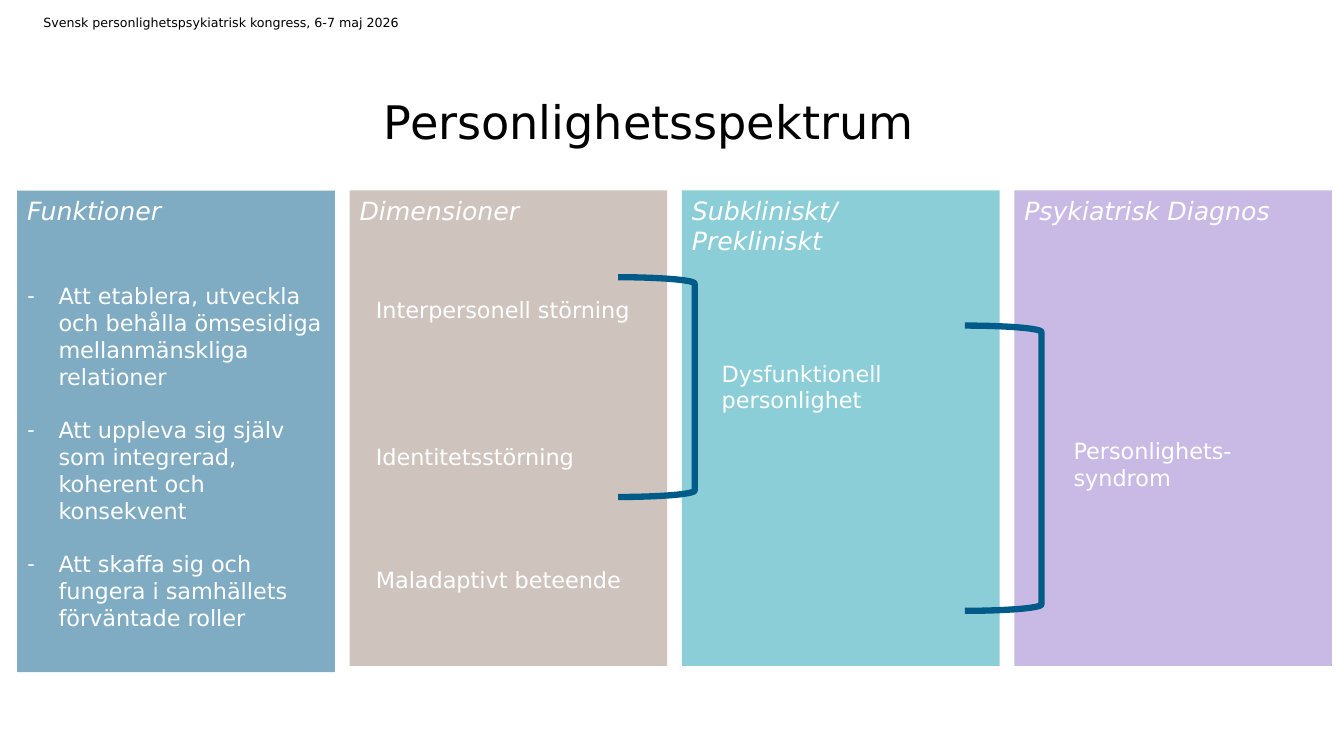
from lxml.etree import SubElement
from pptx import Presentation
from pptx.dml.color import RGBColor
from pptx.enum.shapes import MSO_SHAPE
from pptx.enum.text import MSO_ANCHOR, MSO_AUTO_SIZE, PP_ALIGN
from pptx.oxml.ns import qn
from pptx.util import Inches, Pt


def paint(code):
    """Turn a hex string into a colour."""
    return RGBColor.from_string(code)


class Deck:
    """Style and current slide; lengths are percent of the slide's size."""

    face, ink, pale, deep = "DejaVu Sans", "000000", "FFFFFF", "005B89"

    def __init__(self):
        """Open a deck with one slide."""
        self.show = Presentation()
        self.show.slide_width = Inches(13.33)
        self.show.slide_height = Inches(7.5)
        self.slide = self.show.slides.add_slide(self.show.slide_layouts[1])

    def area(self, x, y, w, h):
        """Give left, top, width and height in slide units."""
        wide, high = self.show.slide_width / 100, self.show.slide_height / 100
        return int(x * wide), int(y * high), int(w * wide), int(h * high)

    def letter(self, shape, text, size, hue, slant=False, side=PP_ALIGN.LEFT,
               anchor=MSO_ANCHOR.TOP, bare=False):
        """Fill a shape with styled text."""
        frame = shape.text_frame
        frame.text = text
        frame.word_wrap = True
        frame.auto_size = MSO_AUTO_SIZE.NONE
        frame.vertical_anchor = anchor
        if bare:
            frame.margin_left = frame.margin_right = 0
            frame.margin_top = frame.margin_bottom = 0
        for para in frame.paragraphs:
            para.alignment = side
            for run in para.runs:
                run.font.name = self.face
                run.font.size = Pt(size)
                run.font.italic = slant
                run.font.color.rgb = paint(hue)

    def place(self, shape, spot):
        """Move a placeholder to the front at the given spot."""
        shape.left, shape.top, shape.width, shape.height = self.area(*spot)
        self.slide.shapes._spTree.append(shape._element)

    def title(self, text, spot):
        """Set the slide title."""
        shape = self.slide.shapes.title
        self.place(shape, spot)
        self.letter(shape, text, 33, self.ink, side=PP_ALIGN.CENTER,
                    anchor=MSO_ANCHOR.BOTTOM, bare=True)

    def items(self, lines, spot):
        """Set the dashed list in the body placeholder."""
        shape = self.slide.placeholders[1]
        self.place(shape, spot)
        self.letter(shape, "\n".join(lines), 16, self.pale)
        for rank, para in enumerate(shape.text_frame.paragraphs):
            props = para._p.get_or_add_pPr()
            props.set("marL", str(Inches(0.31)))
            props.set("indent", str(-Inches(0.31)))
            SubElement(props, qn("a:buChar")).set("char", "-")
            para.space_before = Pt(19 if rank else 0)

    def panel(self, text, hue, spot):
        """Draw a half-clear column with its heading."""
        shape = self.slide.shapes.add_shape(MSO_SHAPE.RECTANGLE, *self.area(*spot))
        shape.shadow.inherit = False
        shape.line.fill.background()
        shape.fill.solid()
        shape.fill.fore_color.rgb = paint(hue)
        tone = shape._element.spPr.find(qn("a:solidFill"))[0]
        SubElement(tone, qn("a:alpha")).set("val", "50000")
        self.letter(shape, text, 18, self.pale, slant=True)

    def label(self, text, spot, size=16, hue=pale, **more):
        """Add a plain text box."""
        shape = self.slide.shapes.add_textbox(*self.area(*spot))
        self.letter(shape, text, size, hue, **more)

    def brace(self, spot):
        """Draw a right bracket."""
        shape = self.slide.shapes.add_shape(MSO_SHAPE.RIGHT_BRACKET, *self.area(*spot))
        shape.shadow.inherit = False
        shape.fill.background()
        shape.line.color.rgb = paint(self.deep)
        shape.line.width = Pt(4.5)


def main():
    """Build and save the slide."""
    deck = Deck()
    panels = [("Funktioner", "005B89", 63.7),
              ("Dimensioner", "A1887F", 62.9),
              ("Subkliniskt/\nPrekliniskt", "1A9FB3", 62.9),
              ("Psykiatrisk Diagnos", "9575CD", 62.9)]
    for col, (text, hue, high) in enumerate(panels):
        deck.panel(text, hue, (1.28 + 24.73 * col, 25.2, 23.63, high))
    deck.title("Personlighetsspektrum ", (12.45, 4.4, 72.77, 15.33))
    deck.items(["Att etablera, utveckla och behålla ömsesidiga mellanmänskliga relationer",
                "Att uppleva sig själv som integrerad, koherent och konsekvent",
                "Att skaffa sig och fungera i samhällets förväntade roller"],
               (1.28, 36.67, 23.63, 51))
    labels = [("Interpersonell störning", (27.23, 38.53, 20.41, 8.53)),
              ("Identitetsstörning", (27.23, 58, 21.53, 4.93)),
              ("Maladaptivt beteende", (27.23, 74.27, 22.43, 4.93)),
              ("Dysfunktionell personlighet", (52.96, 46.93, 15.98, 8.53)),
              ("Personlighets-\nsyndrom", (79.14, 57.2, 15.45, 8.53))]
    for text, spot in labels:
        deck.label(text, spot)
    deck.brace((45.99, 36.67, 5.7, 29.07))
    deck.brace((71.79, 43.07, 5.7, 37.73))
    deck.label("Svensk personlighetspsykiatrisk kongress, 6-7 maj 2026",
               (3.23, 2, 33.83, 2), 9, deck.ink, anchor=MSO_ANCHOR.MIDDLE, bare=True)
    deck.show.save("out.pptx")


if __name__ == "__main__":
    main()
